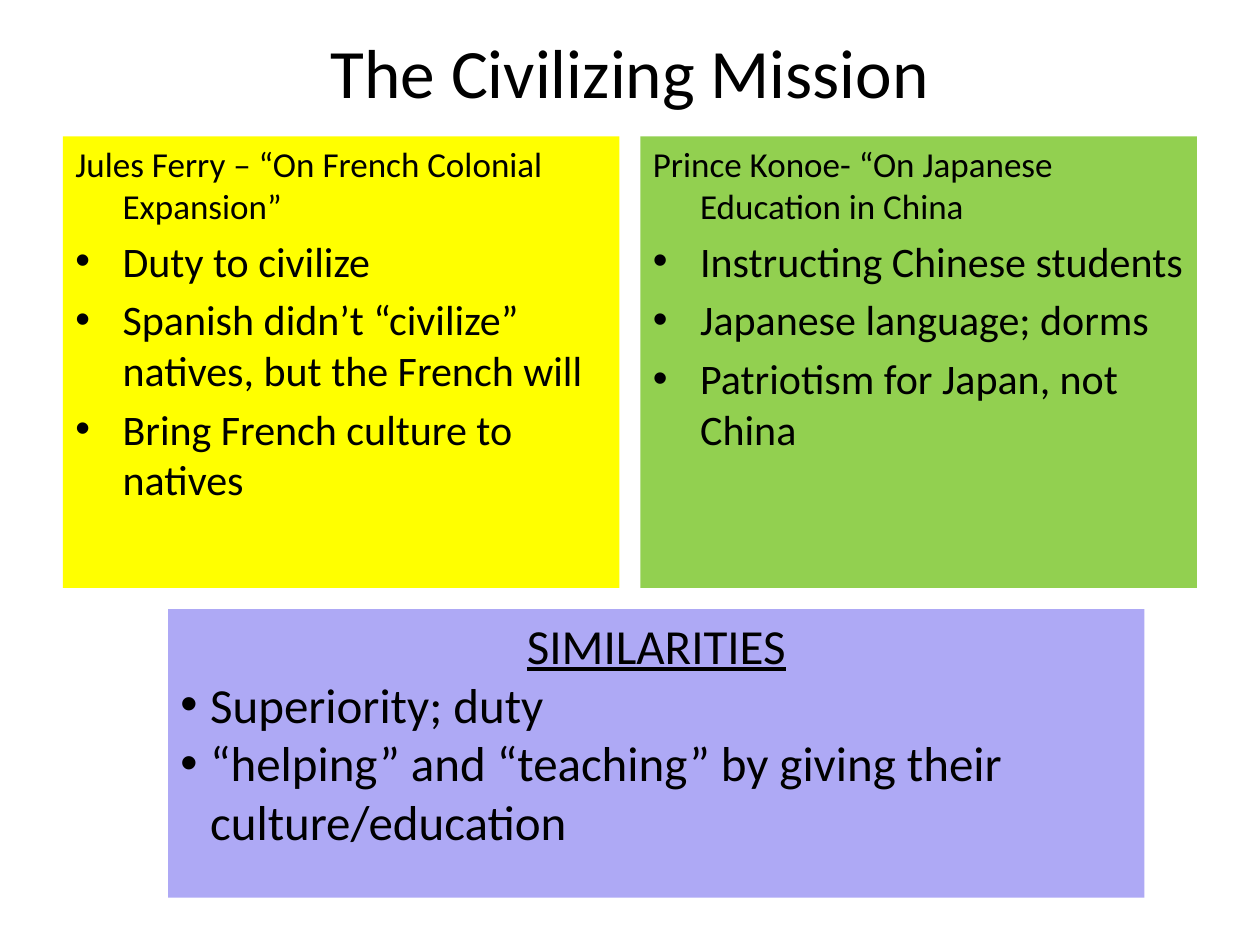
import pptx
import pptx.util
import pptx.dml.color
import pptx.enum.shapes
import pptx.enum.text
import pptx.oxml

Pt = pptx.util.Pt
RGBColor = pptx.dml.color.RGBColor
ALIGN = pptx.enum.text.PP_ALIGN
ANCHOR = pptx.enum.text.MSO_ANCHOR

BLACK = RGBColor(0x00, 0x00, 0x00)
YELLOW = RGBColor(0xFF, 0xFF, 0x00)
GREEN = RGBColor(0x92, 0xD0, 0x50)
LILAC = RGBColor(0xAE, 0xA9, 0xF5)
NS = 'xmlns:a="http://schemas.openxmlformats.org/drawingml/2006/main"'


def add_text(tf, text, size=24, align=ALIGN.LEFT, before=0, hang=0,
             bullet=False, underline=False):
    """Write text into the empty first paragraph, or into a new one."""
    p = tf.paragraphs[0] if not tf.text else tf.add_paragraph()
    p.alignment = align
    p.space_before = Pt(before)
    pPr = p._p.get_or_add_pPr()
    if hang:
        pPr.set("marL", str(Pt(hang)))
        pPr.set("indent", str(-Pt(hang)))
    if bullet:
        pPr.append(pptx.oxml.parse_xml(f'<a:buFont {NS} typeface="Arial"/>'))
        pPr.append(pptx.oxml.parse_xml(f'<a:buChar {NS} char="•"/>'))
    r = p.add_run()
    r.text = text
    r.font.name = "Calibri"
    r.font.size = Pt(size)
    r.font.color.rgb = BLACK
    r.font.underline = underline


def add_panel(s, left, top, width, height, color):
    """Draw a filled box and return its text frame."""
    sp = s.shapes.add_shape(pptx.enum.shapes.MSO_SHAPE.RECTANGLE,
                            Pt(left), Pt(top), Pt(width), Pt(height))
    sp.shadow.inherit = False
    sp.fill.solid()
    sp.fill.fore_color.rgb = color
    sp.line.fill.background()
    tf = sp.text_frame
    tf.word_wrap = True
    tf.vertical_anchor = ANCHOR.TOP
    return tf


prs = pptx.Presentation()
prs.slide_width, prs.slide_height = Pt(720), Pt(540)
s = prs.slides.add_slide(prs.slide_layouts[6])

# Title
tf = s.shapes.add_textbox(Pt(36), Pt(21.6), Pt(648), Pt(38)).text_frame
tf.word_wrap = True
tf.vertical_anchor = ANCHOR.MIDDLE
add_text(tf, "The Civilizing Mission", size=39.6, align=ALIGN.CENTER)

# Two sources side by side
SOURCES = [
    (YELLOW, "Jules Ferry – “On French Colonial Expansion”",
     ["Duty to civilize",
      "Spanish didn’t “civilize” natives, but the French will",
      "Bring French culture to natives"]),
    (GREEN, "Prince Konoe- “On Japanese Education in China",
     ["Instructing Chinese students",
      "Japanese language; dorms",
      "Patriotism for Japan, not China"]),
]
WIDTH, GAP = 318, 12
for i, (color, heading, points) in enumerate(SOURCES):
    tf = add_panel(s, 36 + i * (WIDTH + GAP), 78, WIDTH, 258, color)
    add_text(tf, heading, size=20, hang=27)
    for point in points:
        add_text(tf, point, before=4.8, hang=27, bullet=True)

# Similarities
tf = add_panel(s, 96, 348, 558, 165, LILAC)
add_text(tf, "SIMILARITIES", size=28, align=ALIGN.CENTER, underline=True)
for point in ["Superiority; duty",
              "“helping” and “teaching” by giving their culture/education"]:
    add_text(tf, point, size=28, hang=17, bullet=True)

prs.save("out.pptx")
